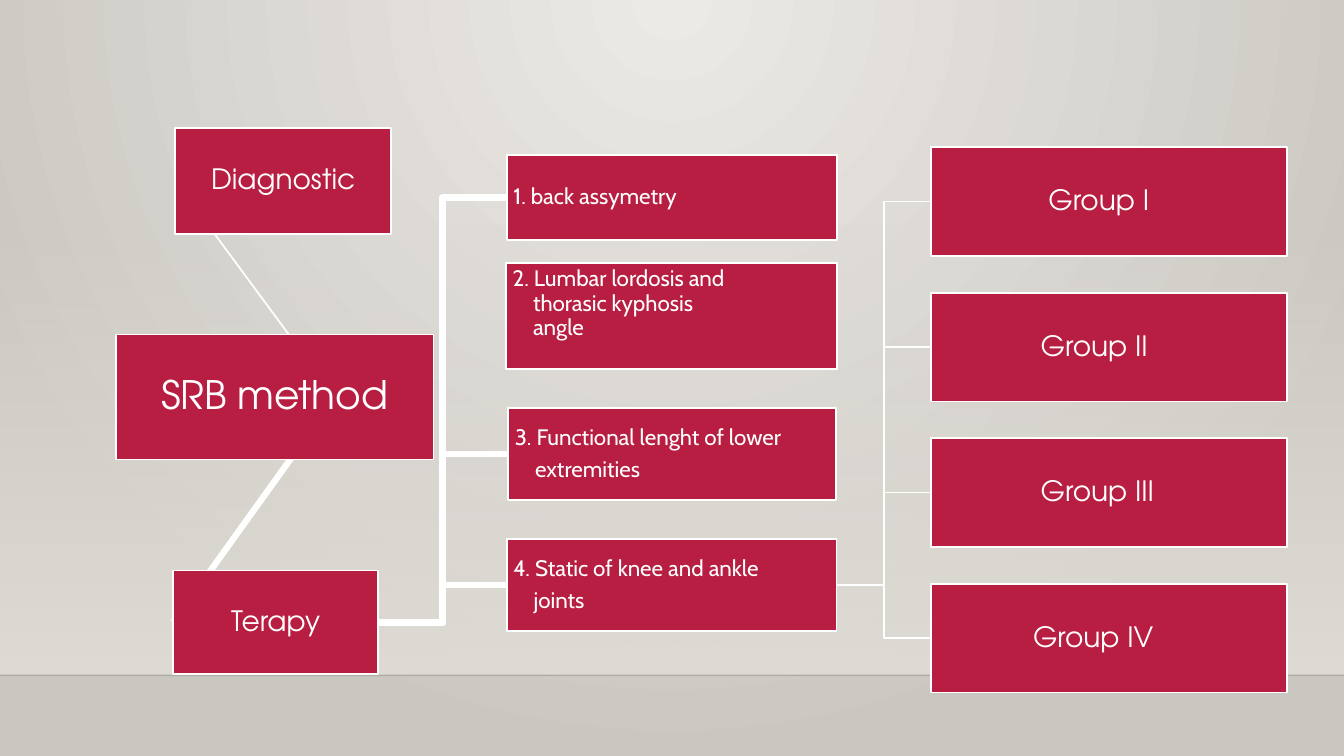
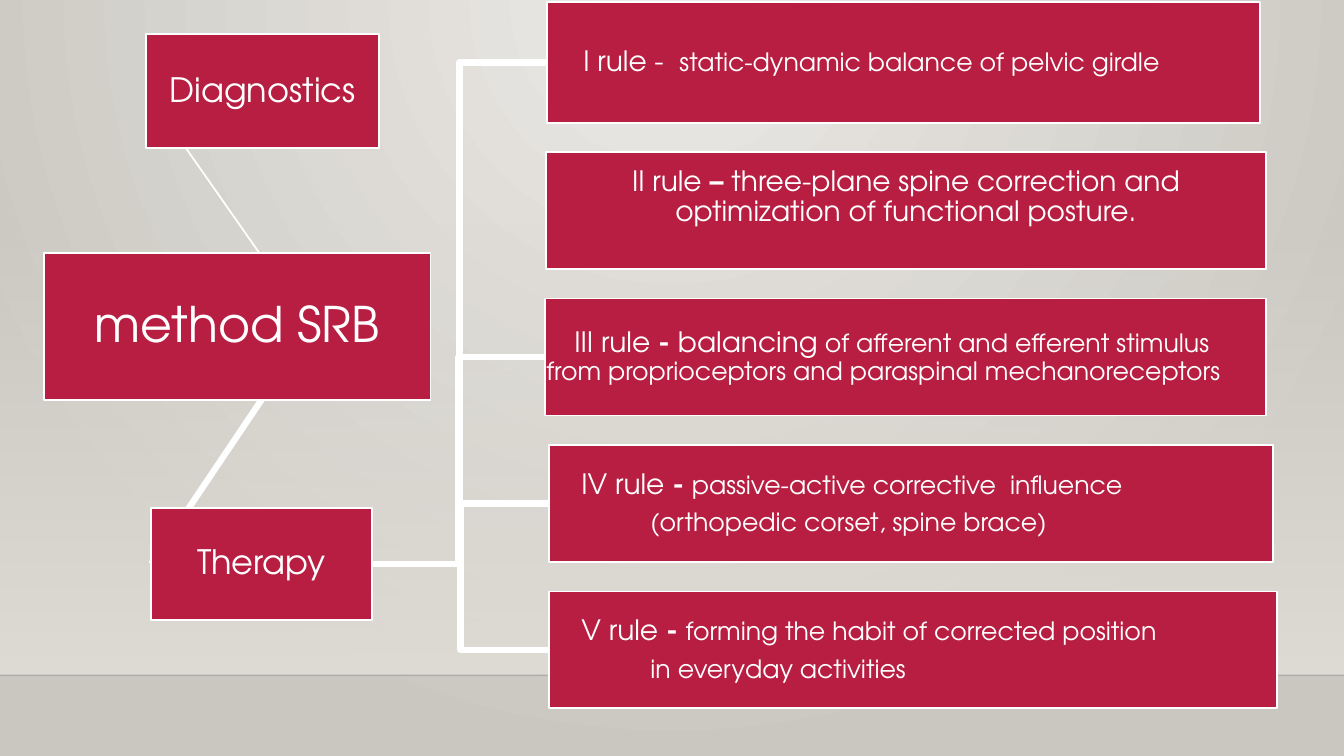
"""Build two diagram slides that present the SRB method."""
from dataclasses import dataclass
from typing import Any

import lxml.etree
import pptx
import pptx.dml.color
import pptx.enum.shapes
import pptx.enum.text
import pptx.oxml.ns
import pptx.util

COLOURS = {
    "glow": "ECEAE7",
    "edge": "CAC7C1",
    "wall": "DFDBD5",
    "floor": "000001",
    "box": "B71E42",
    "white": "FFFFFF",
}
GEOMETRIC = "TeX Gyre Adventor"
HUMANIST = "Cabin"
WIDTH, HEIGHT = 960, 540
WALL_TOP, FLOOR = 159, 482.4
THIN, THICK = 1.25, 4.5
MARGIN = 0.72
HUB_ANCHOR = 0.69
ALIGN = pptx.enum.text.PP_ALIGN


@dataclass(frozen=True)
class Span:
    """A stretch of text in one format."""

    text: str
    size: float
    font: str = GEOMETRIC
    bold: bool = False
    spacing: float = 0


@dataclass(frozen=True)
class Line:
    """A paragraph with its left indent."""

    spans: tuple[Span, ...]
    left: float = 0
    tight: bool = False


@dataclass(frozen=True)
class Box:
    """A filled rectangle with its text."""

    left: float
    top: float
    width: float
    height: float
    lines: tuple[Line, ...]
    centred: bool = False
    side: float = MARGIN
    bottom: float = MARGIN

    @property
    def middle(self) -> float:
        """Return the vertical centre."""
        return self.top + self.height / 2

    @property
    def right(self) -> float:
        """Return the right edge."""
        return self.left + self.width


@dataclass(frozen=True)
class Branch:
    """An elbow link between two boxes."""

    parent: Box
    child: Box
    weight: float


@dataclass(frozen=True)
class Diagram:
    """The content of one slide."""

    hub: Box
    diagnosis: Box
    therapy: Box
    details: tuple[Box, ...]
    branches: tuple[Branch, ...]


def colour(name: str) -> pptx.dml.color.RGBColor:
    """Look up a palette colour."""
    return pptx.dml.color.RGBColor.from_string(COLOURS[name])


def points(*lengths: float) -> list[pptx.util.Length]:
    """Convert numbers to point lengths."""
    return [pptx.util.Pt(length) for length in lengths]


def set_alpha(colour_node: Any, percent: int) -> None:
    """Make a colour element partly transparent."""
    alpha = lxml.etree.SubElement(colour_node, pptx.oxml.ns.qn("a:alpha"))
    alpha.set("val", str(percent * 1000))


def fill_gradient(fill: Any, first: str, last: str) -> None:
    """Apply a two-stop gradient."""
    fill.gradient()
    for stop, name, position in zip(fill.gradient_stops, (first, last), (0, 1)):
        stop.color.rgb = colour(name)
        stop.position = position


def add_line(shapes: Any, start: tuple[float, float], end: tuple[float, float],
             name: str, weight: float) -> Any:
    """Draw a straight line without shadow."""
    line = shapes.add_connector(
        pptx.enum.shapes.MSO_CONNECTOR.STRAIGHT, *points(*start, *end))
    line.line.color.rgb = colour(name)
    line.line.width = pptx.util.Pt(weight)
    properties = line.element.find(pptx.oxml.ns.qn("p:spPr"))
    lxml.etree.SubElement(properties, pptx.oxml.ns.qn("a:effectLst"))
    return line


def build_master(deck: Any, page: Any) -> None:
    """Put the backdrop, wall and floor line on the master."""
    qn = pptx.oxml.ns.qn
    master = deck.slide_master
    fill_gradient(master.background.fill, "glow", "edge")
    gradient = next(master.element.iter(qn("a:gradFill")))
    gradient.remove(gradient.find(qn("a:lin")))
    radial = lxml.etree.Element(qn("a:path"), {"path": "circle"})
    lxml.etree.SubElement(radial, qn("a:fillToRect"), {
        "l": "43000", "t": "0", "r": "43000", "b": "100000"})
    gradient.find(qn("a:gsLst")).addnext(radial)

    wall = page.shapes.add_shape(
        pptx.enum.shapes.MSO_SHAPE.RECTANGLE,
        *points(0, WALL_TOP, WIDTH, FLOOR - WALL_TOP))
    wall.shadow.inherit = False
    wall.line.fill.background()
    fill_gradient(wall.fill, "wall", "wall")
    wall.fill.gradient_angle = 270
    set_alpha(next(wall.element.iter(qn("a:srgbClr"))), 0)

    floor = add_line(page.shapes, (0, FLOOR), (WIDTH, FLOOR), "floor", 1)
    set_alpha(next(floor.element.iter(qn("a:srgbClr"))), 20)
    for position, shape in enumerate((wall, floor), start=2):
        master.shapes.element.insert(position, shape.element)


def add_branch(page: Any, branch: Branch) -> None:
    """Draw an elbow from a parent box to a child box."""
    parent, child = branch.parent, branch.child
    bend = (parent.right + child.left) / 2
    corners = [(parent.right, parent.middle), (bend, parent.middle),
               (bend, child.middle), (child.left, child.middle)]
    start, *rest = [tuple(points(*corner)) for corner in corners]
    builder = page.shapes.build_freeform(*start)
    builder.add_line_segments(rest, close=False)
    elbow = builder.convert_to_shape()
    elbow.shadow.inherit = False
    elbow.fill.background()
    elbow.line.color.rgb = colour("white")
    elbow.line.width = pptx.util.Pt(branch.weight)


def write_line(para: Any, line: Line, centred: bool) -> None:
    """Fill a paragraph run by run."""
    para.alignment = ALIGN.CENTER if centred else ALIGN.LEFT
    para.line_spacing = 0.9
    largest = max(span.size for span in line.spans)
    para.space_after = pptx.util.Pt(0 if line.tight else round(0.35 * largest, 1))
    para._p.get_or_add_pPr().set("marL", str(pptx.util.Pt(line.left)))
    for span in line.spans:
        run = para.add_run()
        run.text = span.text
        run.font.name = span.font
        run.font.size = pptx.util.Pt(span.size)
        run.font.bold = span.bold
        run.font.color.rgb = colour("white")
        if span.spacing:
            run._r.get_or_add_rPr().set("spc", str(round(span.spacing * 100)))


def add_box(page: Any, box: Box) -> None:
    """Draw a box and its text."""
    shape = page.shapes.add_shape(
        pptx.enum.shapes.MSO_SHAPE.RECTANGLE,
        *points(box.left, box.top, box.width, box.height))
    shape.shadow.inherit = False
    shape.fill.solid()
    shape.fill.fore_color.rgb = colour("box")
    shape.line.color.rgb = colour("white")
    shape.line.width = pptx.util.Pt(THIN)
    frame = shape.text_frame
    frame.word_wrap = True
    frame.vertical_anchor = pptx.enum.text.MSO_ANCHOR.MIDDLE
    frame.margin_left = frame.margin_right = pptx.util.Pt(box.side)
    frame.margin_top = pptx.util.Pt(MARGIN)
    frame.margin_bottom = pptx.util.Pt(box.bottom)
    for index, line in enumerate(box.lines):
        para = frame.add_paragraph() if index else frame.paragraphs[0]
        write_line(para, line, box.centred)


def draw_diagram(page: Any, diagram: Diagram) -> None:
    """Draw the links and then the boxes."""
    for branch in diagram.branches:
        add_branch(page, branch)
    hub = diagram.hub
    anchor = (hub.left + HUB_ANCHOR * hub.width, hub.middle)
    for target, weight in ((diagram.therapy, THICK), (diagram.diagnosis, THIN)):
        add_line(page.shapes, anchor, (target.left, target.middle), "white", weight)
    for box in (hub, diagram.diagnosis, diagram.therapy, *diagram.details):
        add_box(page, box)


def label(text: str, size: float, *place: float) -> Box:
    """Make a box with one centred label."""
    return Box(*place, lines=(Line((Span(text, size),)),), centred=True)


def finding(*texts: str, place: tuple[float, ...], tight: bool = False,
            bottom: float = MARGIN) -> Box:
    """Make a numbered finding with hanging lines."""
    lines = tuple(Line((Span(text, 16, HUMANIST),), 18.5 if index else 4, tight)
                  for index, text in enumerate(texts))
    return Box(*place, lines=lines, bottom=bottom)


def heading(number: str, *spans: Span, left: float, tight: bool = False) -> Line:
    """Make the opening line of a rule."""
    opening = (Span(f"{number} rule ", 20), Span("- ", 20, bold=True))
    return Line(opening + spans, left, tight)


def method_diagram() -> Diagram:
    """Describe the findings and groups."""
    therapy = label("Terapy", 20, 123.8, 407.5, 146.2, 74.2)
    findings = (
        finding("1. back assymetry", place=(362, 110.9, 236, 60.5)),
        finding("2. Lumbar lordosis and", "thorasic kyphosis", "angle",
                place=(361.5, 187.9, 236.2, 75.6), tight=True, bottom=18),
        finding("3. Functional lenght of lower", "extremities",
                place=(363, 291.6, 234, 65.5)),
        finding("4. Static of knee and ankle", "joints",
                place=(362, 385.2, 235.5, 65.5)),
    )
    indents = {"I": 83, "II": 77.5, "III": 77.5, "IV": 72}
    groups = tuple(
        Box(665.2, 105.1 + 103.95 * row, 254.2, 77.8,
            (Line((Span(f"Group {number}", 20),), left),))
        for row, (number, left) in enumerate(indents.items()))
    branches = [Branch(findings[3], group, THIN) for group in groups]
    branches += [Branch(therapy, findings[row], THICK) for row in (3, 2, 0)]
    return Diagram(
        label("SRB method", 28, 82.8, 239, 226.8, 89.3),
        label("Diagnostic", 20, 125.3, 91.4, 154.1, 75.6),
        therapy, findings + groups, tuple(branches))


def rules_diagram() -> Diagram:
    """Describe the five rules of therapy."""
    therapy = label("Therapy", 24, 108, 362.9, 157.7, 79.9)
    tops = [108.7 + 104.6 * row for row in range(4)]
    height = 83.5
    rules = (
        Box(391, 1.4, 509, 86.4, (Line((
            Span("I rule -", 20), Span(" ", 20, spacing=5.5),
            Span("static-dynamic balance of pelvic girdle", 18)), 25),)),
        Box(390.2, tops[0], 514, height, (Line((
            Span("II rule ", 20), Span("– ", 20, bold=True),
            Span("three-plane spine correction and optimization"
                 " of functional posture.", 20))),),
            centred=True, side=12, bottom=20),
        Box(389.5, tops[1], 514.8, height, (
            heading("III", Span("balancing", 20),
                    Span(" of afferent and efferent stimulus", 18),
                    left=20, tight=True),
            Line((Span("from proprioceptors and paraspinal mechanoreceptors", 18),)))),
        Box(392.4, tops[2], 517, height, (
            heading("IV", Span("passive-active corrective", 18),
                    Span(" ", 18, spacing=5), Span("influence", 18), left=22.2),
            Line((Span("(orthopedic corset, spine brace)", 18),), 71.5))),
        Box(392.4, tops[3], 519.8, height, (
            heading("V", Span("forming the habit of corrected position", 18),
                    left=22.2),
            Line((Span("in everyday activities", 18),), 71.5))),
    )
    return Diagram(
        label("method SRB", 35, 31.7, 180.7, 275.8, 105.1),
        label("Diagnostics", 24, 104.4, 24.5, 166.3, 81.4),
        therapy, rules,
        tuple(Branch(therapy, rules[row], THICK) for row in (4, 3, 2, 0)))


def main() -> None:
    """Build and save the deck."""
    deck = pptx.Presentation()
    deck.slide_width, deck.slide_height = points(WIDTH, HEIGHT)
    blank = deck.slide_layouts[6]
    pages = [deck.slides.add_slide(blank) for _ in range(2)]
    build_master(deck, pages[0])
    for page, diagram in zip(pages, (method_diagram(), rules_diagram())):
        draw_diagram(page, diagram)
    deck.save("out.pptx")


if __name__ == "__main__":
    main()
